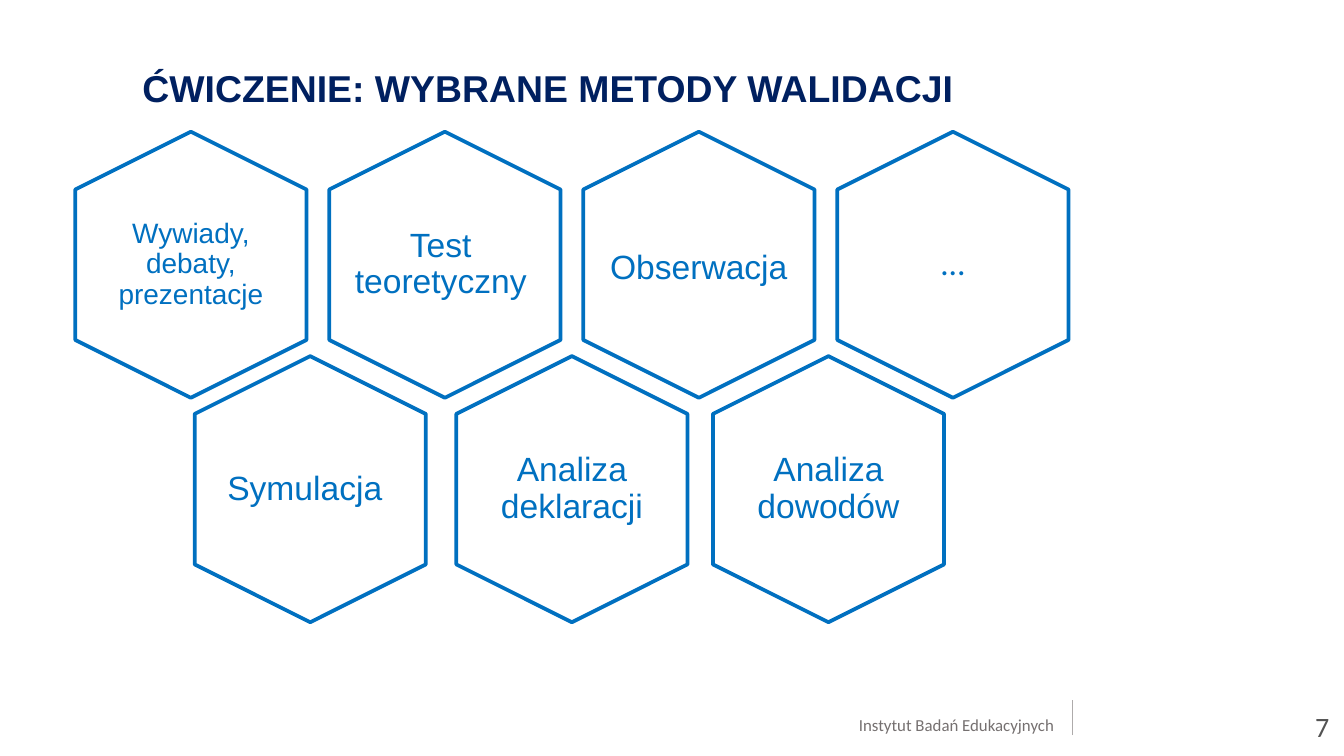
from lxml.etree import SubElement
from pptx import Presentation
from pptx.dml.color import RGBColor
from pptx.enum.shapes import MSO_CONNECTOR as Connector, MSO_SHAPE as Shape
from pptx.enum.text import MSO_ANCHOR as Anchor, PP_ALIGN as Align
from pptx.oxml.ns import qn
from pptx.util import Inches, Pt

BLUE = RGBColor(0x00, 0x70, 0xC0)
NAVY = RGBColor(0x00, 0x20, 0x60)
FOOTER_GREY = RGBColor(0x75, 0x70, 0x70)
RULE_GREY = RGBColor(0xAE, 0xAB, 0xAB)
NUMBER_GREY = RGBColor(0x53, 0x53, 0x53)

TITLE = "ĆWICZENIE: WYBRANE METODY WALIDACJI"
FOOTER = "Instytut Badań Edukacyjnych"
PAGE = "7"
# label, column, row, label width, label offset, size, font
METHODS = [
    ("Wywiady, debaty, prezentacje", 0, 0, 1.19, (0, 0), 15, "Arial"),
    ("Test teoretyczny", 1, 0, 1.34, (-0.03, 0), 18, "Arial"),
    ("Obserwacja", 2, 0, 1.53, (0, 0.03), 18, "Arial"),
    ("…", 3, 0, 1.19, (0, 0), 18, "Calibri"),
    ("Symulacja", 0.47, 1, 1.26, (-0.04, 0), 18, "Arial"),
    ("Analiza deklaracji", 1.5, 1, 1.19, (0, 0), 18, "Arial"),
    ("Analiza dowodów", 2.51, 1, 1.19, (0, 0), 18, "Arial"),
]
SLIDE_WIDTH = Inches(10)
SLIDE_HEIGHT = SLIDE_WIDTH * 9 // 16
FIRST_X, FIRST_Y = 1.42, 1.97
COLUMN_PITCH, ROW_PITCH = 1.89, 1.67
HEX_LENGTH, HEX_WIDTH, LABEL_HEIGHT = 1.98, 1.72, 1.36


def centred(x, y, width, height):
    return [Inches(v) for v in (x - width / 2, y - height / 2, width, height)]


def write(box, text, size, font, color, align, anchor=Anchor.TOP,
          inset=(0, 0), spacing=1.0, bold=False):
    frame = box.text_frame
    frame.word_wrap = True
    frame.vertical_anchor = anchor
    frame.margin_left = frame.margin_right = Inches(inset[0])
    frame.margin_top = frame.margin_bottom = Inches(inset[1])
    frame.text = text
    paragraph = frame.paragraphs[0]
    paragraph.alignment = align
    paragraph.line_spacing = spacing
    paragraph.font.size = Pt(size)
    paragraph.font.name = font
    paragraph.font.bold = bold
    paragraph.font.color.rgb = color


def add_method(slide, label, column, row, width, offset, size, font):
    x = FIRST_X + column * COLUMN_PITCH
    y = FIRST_Y + row * ROW_PITCH
    hexagon = slide.shapes.add_shape(
        Shape.HEXAGON, *centred(x, y, HEX_LENGTH, HEX_WIDTH))
    hexagon.rotation = 90
    hexagon.adjustments[0] = 0.25
    hexagon.shadow.inherit = False
    hexagon.fill.background()
    hexagon.line.color.rgb = BLUE
    hexagon.line.width = Pt(2)
    SubElement(hexagon.line._get_or_add_ln(), qn("a:round"))
    caption = slide.shapes.add_textbox(
        *centred(x + offset[0], y + offset[1], width, LABEL_HEIGHT))
    write(caption, label, size, font, BLUE, Align.CENTER, Anchor.MIDDLE,
          (0.03, 0.03), 0.9)


def main():
    """Build the slide of validation methods."""
    deck = Presentation()
    deck.slide_width, deck.slide_height = SLIDE_WIDTH, SLIDE_HEIGHT
    slide = deck.slides.add_slide(deck.slide_layouts[5])

    title = slide.shapes.title
    title.left, title.top = Inches(1.06), Inches(0.52)
    title.width, title.height = Inches(8.59), Inches(0.47)
    write(title, TITLE, 20, "Arial", NAVY, Align.LEFT, spacing=0.9, bold=True)

    for method in METHODS:
        add_method(slide, *method)

    footer = slide.shapes.add_textbox(
        Inches(6.17), Inches(5.32), Inches(1.67), Inches(0.14))
    write(footer, FOOTER, 9, "Calibri", FOOTER_GREY, Align.RIGHT)

    divider = slide.shapes.add_connector(
        Connector.STRAIGHT, Inches(7.98), Inches(5.47), Inches(7.98), Inches(5.21))
    divider.line.color.rgb = RULE_GREY
    divider.line.width = Pt(0.75)
    SubElement(divider._element.spPr, qn("a:effectLst"))

    number = slide.shapes.add_textbox(
        Inches(9.36), Inches(5.19), Inches(0.6), Inches(0.43))
    write(number, PAGE, 15, "Calibri", NUMBER_GREY, Align.RIGHT, Anchor.MIDDLE,
          (0.07, 0.04))

    deck.save("out.pptx")


if __name__ == "__main__":
    main()
